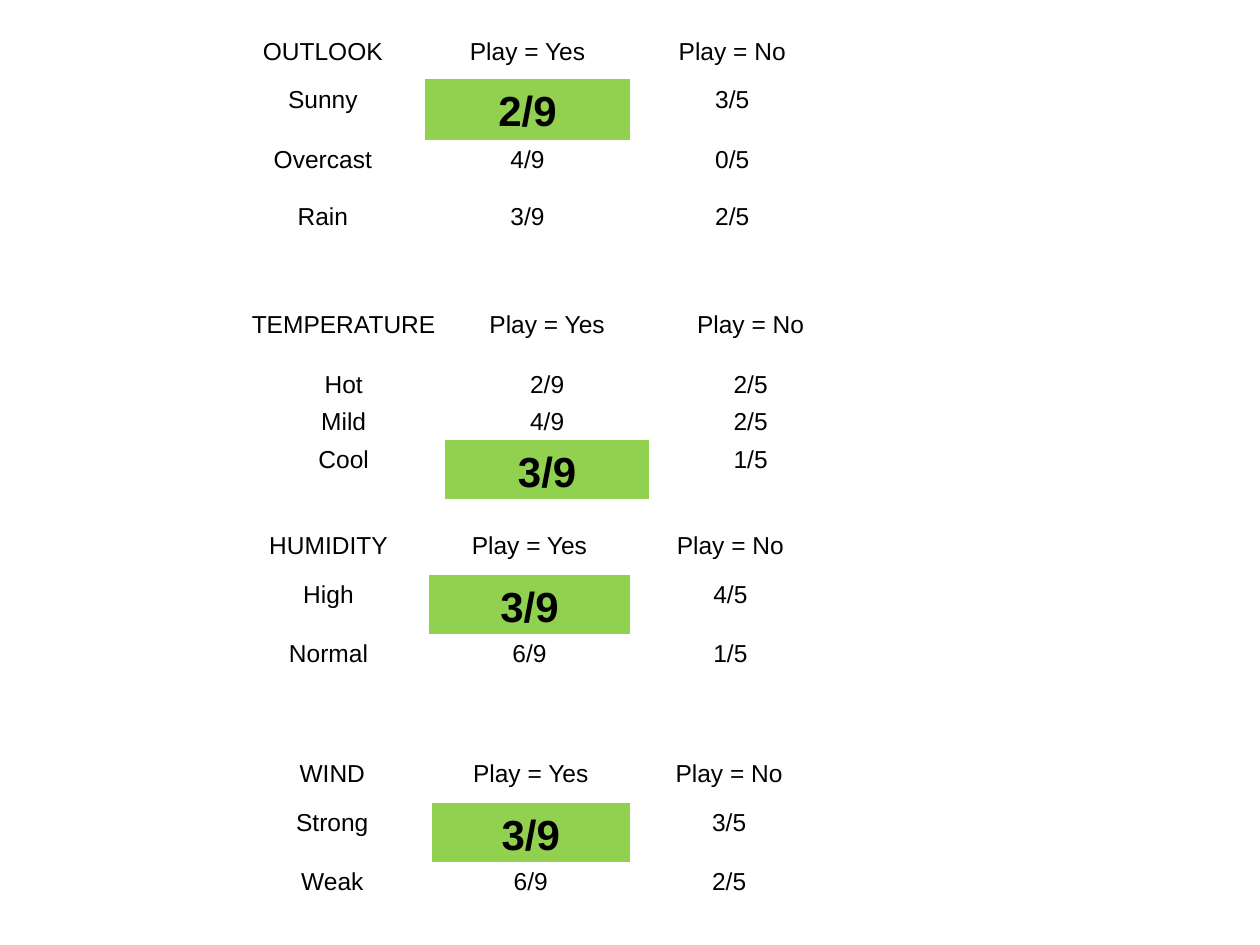
import dataclasses

import lxml.etree
import pptx
import pptx.dml.color
import pptx.enum.text
import pptx.oxml.ns
import pptx.presentation
import pptx.slide
import pptx.table
import pptx.util

COLORS = {"text": "000000", "likely": "92D050"}
FONT = "Arial"
BODY_FORMAT = {"size": pptx.util.Pt(14), "bold": False, "name": FONT}
LIKELY_FORMAT = {"size": pptx.util.Pt(24), "bold": True, "name": FONT}
CELL_FORMAT = {
    f"margin_{side}": pptx.util.Inches(0.02)
    for side in ("left", "right", "top", "bottom")
}
NO_STYLE_NO_GRID = "{2D5ABB26-0587-4C30-8999-92F81FD0307C}"
COLUMNS = 4  # the last column is left empty


@dataclasses.dataclass(frozen=True)
class Likelihoods:
    """Likelihood table of one attribute; lengths are percent of the slide."""

    attribute: str
    left: float
    top: float
    width: float
    heights: tuple[float, ...]
    rows: tuple[tuple[str, str, str], ...]
    likely_row: int


ATTRIBUTES = (
    Likelihoods("TEMPERATURE", 19.2, 32.27, 64.6, (6.27, 4, 4, 6.27),
                (("Hot", "2/9", "2/5"), ("Mild", "4/9", "2/5"),
                 ("Cool", "3/9", "1/5")), 3),
    Likelihoods("HUMIDITY", 18.1, 55.6, 63.8, (5.2, 6.27, 4.67),
                (("High", "3/9", "4/5"), ("Normal", "6/9", "1/5")), 1),
    Likelihoods("WIND", 18.5, 79.73, 63, (5.2, 6.27, 4.4, 4.4),
                (("Strong", "3/9", "3/5"), ("Weak", "6/9", "2/5")), 1),
    Likelihoods("OUTLOOK", 17.5, 3.33, 65, (5.07, 6.4, 6, 6),
                (("Sunny", "2/9", "3/5"), ("Overcast", "4/9", "0/5"),
                 ("Rain", "3/9", "2/5")), 1),
)


def apply_format(target: object, values: dict) -> None:
    for attribute, value in values.items():
        setattr(target, attribute, value)


def fill_cell(cell: pptx.table._Cell, text: str, likely: bool) -> None:
    apply_format(cell, CELL_FORMAT)
    paragraph = cell.text_frame.paragraphs[0]
    apply_format(paragraph, {"alignment": pptx.enum.text.PP_ALIGN.CENTER,
                             "line_spacing": 1.15})
    if likely:
        cell.fill.solid()
        cell.fill.fore_color.rgb = pptx.dml.color.RGBColor.from_string(COLORS["likely"])
    else:
        cell.fill.background()
    if text:
        entry = paragraph.add_run()
        entry.text = text
        apply_format(entry.font, LIKELY_FORMAT if likely else BODY_FORMAT)
        entry.font.color.rgb = pptx.dml.color.RGBColor.from_string(COLORS["text"])
    else:
        # Keep empty cells from stretching their row
        lxml.etree.SubElement(paragraph._p, pptx.oxml.ns.qn("a:endParaRPr"), sz="1400")


def draw_likelihoods(deck: pptx.presentation.Presentation,
                     slide: pptx.slide.Slide, group: Likelihoods) -> None:
    def across(percent: float) -> int:
        return round(deck.slide_width * percent / 100)

    def down(percent: float) -> int:
        return round(deck.slide_height * percent / 100)

    frame = slide.shapes.add_table(
        len(group.heights), COLUMNS, across(group.left), down(group.top),
        across(group.width), down(sum(group.heights)))
    grid = frame.table
    apply_format(grid, {"first_row": False, "horz_banding": False})
    grid._tbl.tblPr.find(pptx.oxml.ns.qn("a:tableStyleId")).text = NO_STYLE_NO_GRID
    for column in grid.columns:
        column.width = across(group.width / COLUMNS)
    for row, height in zip(grid.rows, group.heights):
        row.height = down(height)

    # Header, then one row per value of the attribute
    lines = ((group.attribute, "Play = Yes", "Play = No"), *group.rows)
    for r in range(len(group.heights)):
        for c in range(COLUMNS):
            has_text = r < len(lines) and c < len(lines[r])
            fill_cell(grid.cell(r, c), lines[r][c] if has_text else "",
                      (r, c) == (group.likely_row, 1))


def main() -> None:
    deck = pptx.Presentation()
    deck.slide_width = pptx.util.Inches(10)
    deck.slide_height = pptx.util.Inches(7.5)
    slide = deck.slides.add_slide(deck.slide_layouts[6])
    for group in ATTRIBUTES:
        draw_likelihoods(deck, slide, group)
    deck.save("out.pptx")


if __name__ == "__main__":
    main()
